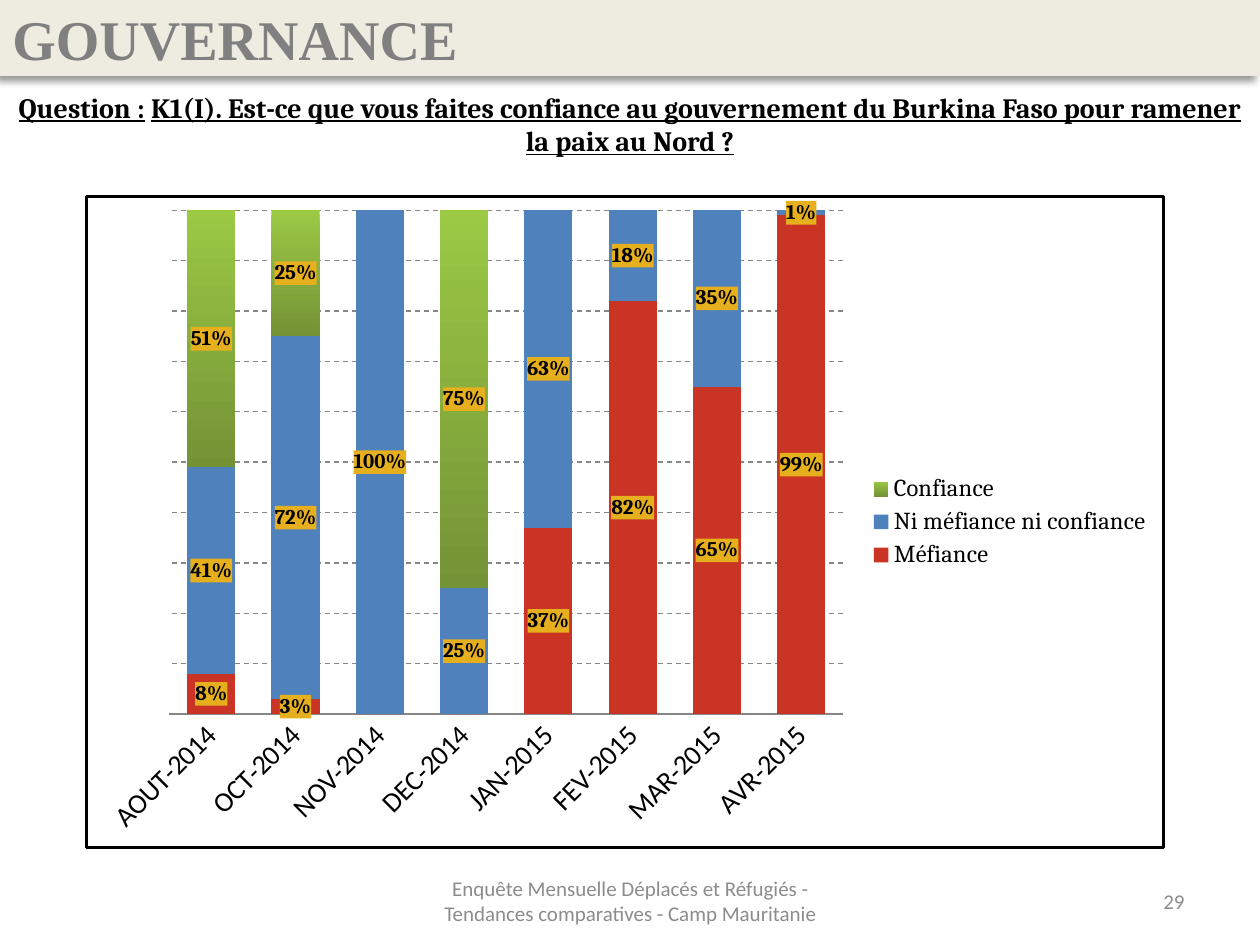
import pptx
import pptx.chart.data
import pptx.dml.color
import pptx.enum.chart
import pptx.enum.dml
import pptx.enum.shapes
import pptx.enum.text
import pptx.oxml
import pptx.oxml.ns
import pptx.util

SCALE = 914400 / 126
ALIGN = pptx.enum.text.PP_ALIGN
ANCHOR = pptx.enum.text.MSO_ANCHOR
NAMESPACES = pptx.oxml.ns.nsdecls("a", "c")

HEADER_BOX = (0, 0, 1260, 76)
CHART_BOX = (85, 195, 1080, 654)
PLOT_BOX = (168, 209, 676, 506)
LEGEND_BOX = (866, 470, 290, 104)

HEADER = [("GOUVERNANCE", dict(size=32, font="Times New Roman", color="808080", bold=True))]
BOLD = dict(size=16, font="Cambria", color="000000", bold=True)
QUESTION = [
    ("Question :", dict(BOLD, underline=True)),
    (" ", BOLD),
    ("K1(I). Est-ce que vous faites confiance au gouvernement du Burkina Faso pour ramener la paix au Nord ?",
     dict(BOLD, underline=True)),
]
SMALL = dict(size=12, font="Calibri", color="8C8C8C")
TEXT_BOXES = [
    ((903, 876, 294, 50), [("29", SMALL)], ALIGN.RIGHT, ANCHOR.MIDDLE),
    ((431, 876, 399, 50),
     [("Enquête Mensuelle Déplacés et Réfugiés - Tendances comparatives - Camp Mauritanie", SMALL)],
     ALIGN.CENTER, ANCHOR.MIDDLE),
    ((0, 84, 1260, 81), QUESTION, ALIGN.CENTER, ANCHOR.TOP),
]

MONTHS = ["AOUT-2014", "OCT-2014", "NOV-2014", "DEC-2014", "JAN-2015", "FEV-2015", "MAR-2015", "AVR-2015"]
SERIES = [
    ("Méfiance", [0.08, 0.03, 0, 0, 0.37, 0.82, 0.65, 0.99], ["CA3424"]),
    ("Ni méfiance ni confiance", [0.41, 0.72, 1, 0.25, 0.63, 0.18, 0.35, 0.01], ["4F81BD"]),
    ("Confiance", [0.51, 0.25, 0, 0.75, 0, 0, 0, 0], ["9BC944", "749336"]),
]


def px(value):
    return round(value * SCALE)


def rgb(value):
    return pptx.dml.color.RGBColor.from_string(value)


def style_font(font, size, name, color="000000", bold=False, underline=False):
    font.size = pptx.util.Pt(size)
    font.name = name
    font.color.rgb = rgb(color)
    font.bold = bold
    font.underline = underline


def write(shape, runs, align, anchor):
    frame = shape.text_frame
    frame.word_wrap = True
    frame.vertical_anchor = anchor
    paragraph = frame.paragraphs[0]
    paragraph.alignment = align
    for text, look in runs:
        run = paragraph.add_run()
        run.text = text
        style_font(run.font, look["size"], look["font"], look["color"],
                   look.get("bold", False), look.get("underline", False))


def set_layout(element, position, box, inner=False):
    for old in element.findall(pptx.oxml.ns.qn("c:layout")):
        element.remove(old)
    left, top, width, height = CHART_BOX
    fractions = zip("xywh", ((box[0] - left) / width, (box[1] - top) / height,
                             box[2] / width, box[3] / height))
    target = '<c:layoutTarget val="inner"/>' if inner else ""
    modes = '<c:xMode val="edge"/><c:yMode val="edge"/>'
    sizes = "".join(f'<c:{key} val="{value:.4f}"/>' for key, value in fractions)
    element.insert(position, pptx.oxml.parse_xml(
        f"<c:layout {NAMESPACES}><c:manualLayout>{target}{modes}{sizes}</c:manualLayout></c:layout>"))


def shape_properties(content):
    return pptx.oxml.parse_xml(f"<c:spPr {NAMESPACES}>{content}</c:spPr>")


def solid(color):
    return f'<a:solidFill><a:srgbClr val="{color}"/></a:solidFill>'


def style_series(series, values, colors):
    fill = series.format.fill
    if len(colors) == 1:
        fill.solid()
        fill.fore_color.rgb = rgb(colors[0])
    else:
        fill.gradient()
        fill.gradient_angle = 270
        for stop, color in zip(fill.gradient_stops, colors):
            stop.color.rgb = rgb(color)
    labels = series.data_labels
    labels.show_value = True
    labels.number_format = "0%"
    labels.number_format_is_linked = False
    style_font(labels.font, 12, "Cambria", bold=True)
    element = labels._element
    element.find(pptx.oxml.ns.qn("c:txPr")).addprevious(shape_properties(solid("E6AF1E")))
    empty_points = [index for index, value in enumerate(values) if value == 0]
    for position, index in enumerate(empty_points):
        element.insert(position, pptx.oxml.parse_xml(
            f'<c:dLbl {NAMESPACES}><c:idx val="{index}"/><c:delete val="1"/></c:dLbl>'))


def add_trust_chart(slide):
    data = pptx.chart.data.CategoryChartData(number_format="0%")
    data.categories = MONTHS
    for name, values, _ in SERIES:
        data.add_series(name, values)
    chart = slide.shapes.add_chart(pptx.enum.chart.XL_CHART_TYPE.COLUMN_STACKED_100,
                                   *map(px, CHART_BOX), data).chart
    chart.has_title = False
    style_font(chart.font, 10, "Calibri")
    plot = chart.plots[0]
    plot.gap_width = 75
    plot.overlap = 100
    plot.vary_by_categories = False
    for series, (_, values, colors) in zip(plot.series, SERIES):
        style_series(series, values, colors)

    months = chart.category_axis
    months.major_tick_mark = pptx.enum.chart.XL_TICK_MARK.NONE
    months.format.line.color.rgb = rgb("868686")
    style_font(months.tick_labels.font, 16, "Calibri")
    months._element.find(pptx.oxml.ns.qn("c:txPr")).bodyPr.set("rot", "-2700000")

    shares = chart.value_axis
    shares.minimum_scale, shares.maximum_scale, shares.major_unit = 0, 1, 0.1
    shares.tick_labels.number_format = "0%"
    shares.tick_labels.number_format_is_linked = False
    shares.has_major_gridlines = True
    grid = shares.major_gridlines.format.line
    grid.color.rgb = rgb("868686")
    grid.width = pptx.util.Pt(0.75)
    grid.dash_style = pptx.enum.dml.MSO_LINE.DASH
    shares.visible = False

    chart.has_legend = True
    legend = chart.legend
    legend.position = pptx.enum.chart.XL_LEGEND_POSITION.RIGHT
    legend.include_in_layout = False
    style_font(legend.font, 14, "Cambria")
    set_layout(legend._element, 1, LEGEND_BOX)

    root = chart._chartSpace
    set_layout(root.chart.plotArea, 0, PLOT_BOX, inner=True)
    root.chart.addnext(shape_properties(
        f'{solid("FFFFFF")}<a:ln w="19050">{solid("000000")}</a:ln>'))


def add_header(slide):
    header = slide.shapes.add_shape(pptx.enum.shapes.MSO_SHAPE.RECTANGLE, *map(px, HEADER_BOX))
    header.fill.solid()
    header.fill.fore_color.rgb = rgb("EEECE1")
    header.line.fill.background()
    header.shadow.inherit = False
    effects = header._element.spPr.find(pptx.oxml.ns.qn("a:effectLst"))
    effects.append(pptx.oxml.parse_xml(
        f'<a:outerShdw {NAMESPACES} blurRad="50800" dist="50800" dir="8100000" algn="tr" rotWithShape="0">'
        '<a:srgbClr val="000000"><a:alpha val="40000"/></a:srgbClr></a:outerShdw>'))
    write(header, HEADER, ALIGN.LEFT, ANCHOR.MIDDLE)


def main():
    presentation = pptx.Presentation()
    presentation.slide_width, presentation.slide_height = px(1260), px(945)
    slide = presentation.slides.add_slide(presentation.slide_layouts[6])
    add_header(slide)
    for box, runs, align, anchor in TEXT_BOXES:
        write(slide.shapes.add_textbox(*map(px, box)), runs, align, anchor)
    add_trust_chart(slide)
    presentation.save("out.pptx")


if __name__ == "__main__":
    main()
